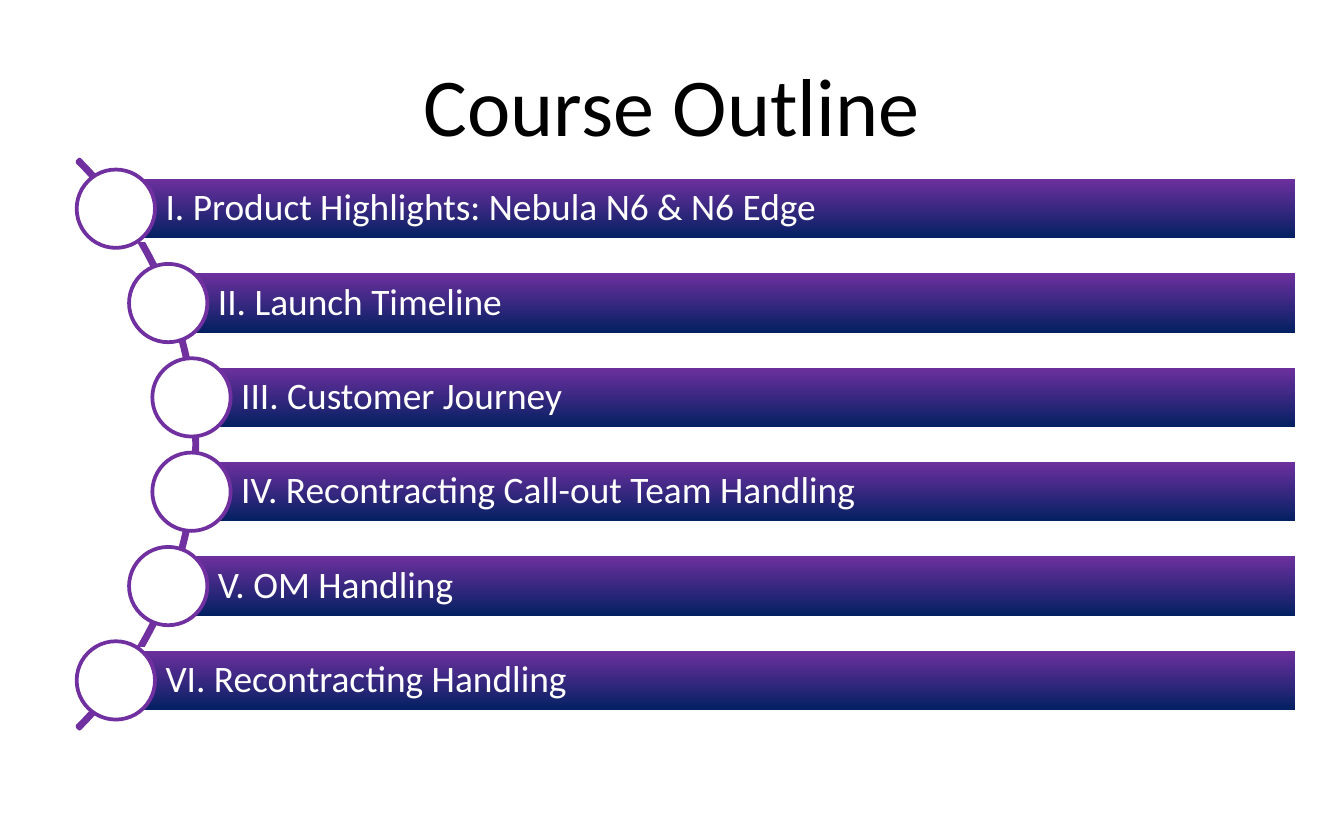
from pptx import Presentation
from pptx.dml.color import RGBColor
from pptx.enum import shapes, text
from pptx.util import Cm, Pt

PURPLE = RGBColor(0x70, 0x30, 0xA0)
NAVY = RGBColor(0x00, 0x20, 0x60)
WHITE = RGBColor(0xFF, 0xFF, 0xFF)
BLACK = RGBColor(0x00, 0x00, 0x00)
FONT = "Calibri"

# Outline rows, in centimetres: each bar starts at the centre of its dot
FIRST_TOP, ROW_PITCH = 3.35, 1.783
BAR_HEIGHT, BAR_RIGHT, DOT_SIZE = 1.19, 24.51, 1.48
TOPICS = [
    (2.19, "I. Product Highlights: Nebula N6 & N6 Edge"),
    (3.18, "II. Launch Timeline"),
    (3.62, "III. Customer Journey"),
    (3.62, "IV. Recontracting Call-out Team Handling"),
    (3.18, "V. OM Handling"),
    (2.19, "VI. Recontracting Handling"),
]


def format_text(frame, size, color, align):
    frame.word_wrap = True
    frame.vertical_anchor = text.MSO_ANCHOR.MIDDLE
    para = frame.paragraphs[0]
    para.alignment = align
    for span in para.runs:
        span.font.name = FONT
        span.font.size = Pt(size)
        span.font.color.rgb = color


def add_title(page, words):
    title = page.shapes.title
    title.left, title.top = Cm(1.27), Cm(0.64)
    title.width, title.height = Cm(22.86), Cm(2.65)
    title.text_frame.text = words
    format_text(title.text_frame, 44, BLACK, text.PP_ALIGN.CENTER)


def add_outlined(page, kind, left, top, width, height, line_color):
    shape = page.shapes.add_shape(kind, Cm(left), Cm(top), Cm(width), Cm(height))
    shape.shadow.inherit = False
    shape.line.color.rgb = line_color
    shape.line.width = Pt(2)
    return shape


def add_arc(page):
    arc = add_outlined(page, shapes.MSO_SHAPE.BLOCK_ARC,
                       -11.48, 0.79, 15.21, 15.21, PURPLE)
    # Start and end angle (315 and 45 degrees), then band thickness
    for index, value in enumerate((189, 27, 0.004)):
        arc.adjustments[index] = value
    arc.fill.background()


def add_bar(page, left, top, words):
    bar = add_outlined(page, shapes.MSO_SHAPE.RECTANGLE,
                       left, top, BAR_RIGHT - left, BAR_HEIGHT, WHITE)
    bar.fill.gradient()
    bar.fill.gradient_angle = 270
    for stop, color in zip(bar.fill.gradient_stops, (PURPLE, NAVY)):
        stop.color.rgb = color
    frame = bar.text_frame
    frame.margin_left = Cm(0.94)
    frame.margin_top = frame.margin_right = frame.margin_bottom = Cm(0.15)
    frame.text = words
    frame.paragraphs[0].line_spacing = 0.9
    format_text(frame, 20, WHITE, text.PP_ALIGN.LEFT)


def add_dot(page, center_x, center_y):
    dot = add_outlined(page, shapes.MSO_SHAPE.OVAL, center_x - DOT_SIZE / 2,
                       center_y - DOT_SIZE / 2, DOT_SIZE, DOT_SIZE, PURPLE)
    dot.fill.solid()
    dot.fill.fore_color.rgb = WHITE


def main():
    deck = Presentation()
    deck.slide_width, deck.slide_height = Cm(25.4), Cm(15.875)
    page = deck.slides.add_slide(deck.slide_layouts[5])

    add_title(page, "Course Outline")
    add_arc(page)

    # One bar and one dot per topic
    for row, (left, words) in enumerate(TOPICS):
        top = FIRST_TOP + row * ROW_PITCH
        add_bar(page, left, top, words)
        add_dot(page, left, top + BAR_HEIGHT / 2)

    deck.save("out.pptx")


if __name__ == "__main__":
    main()
